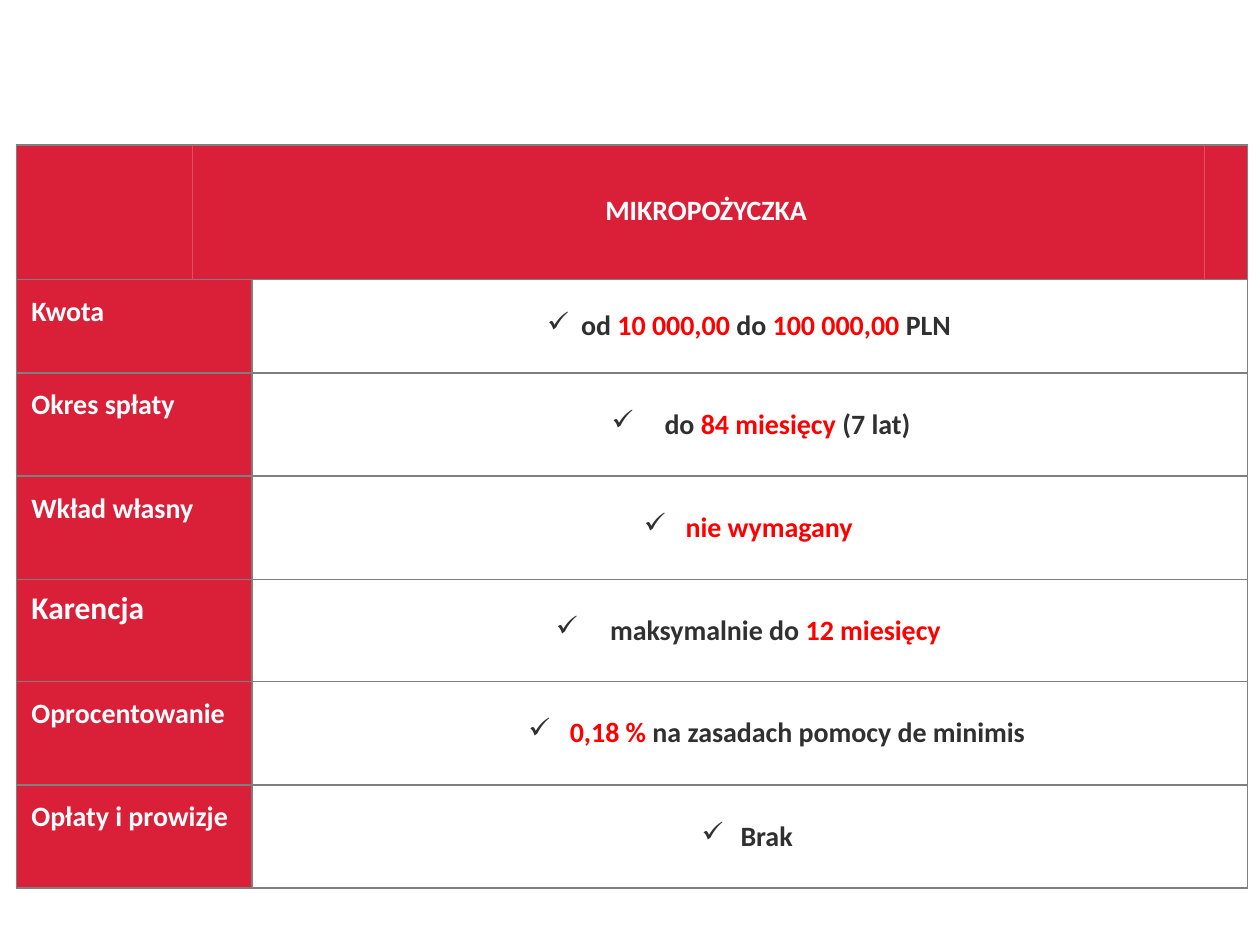
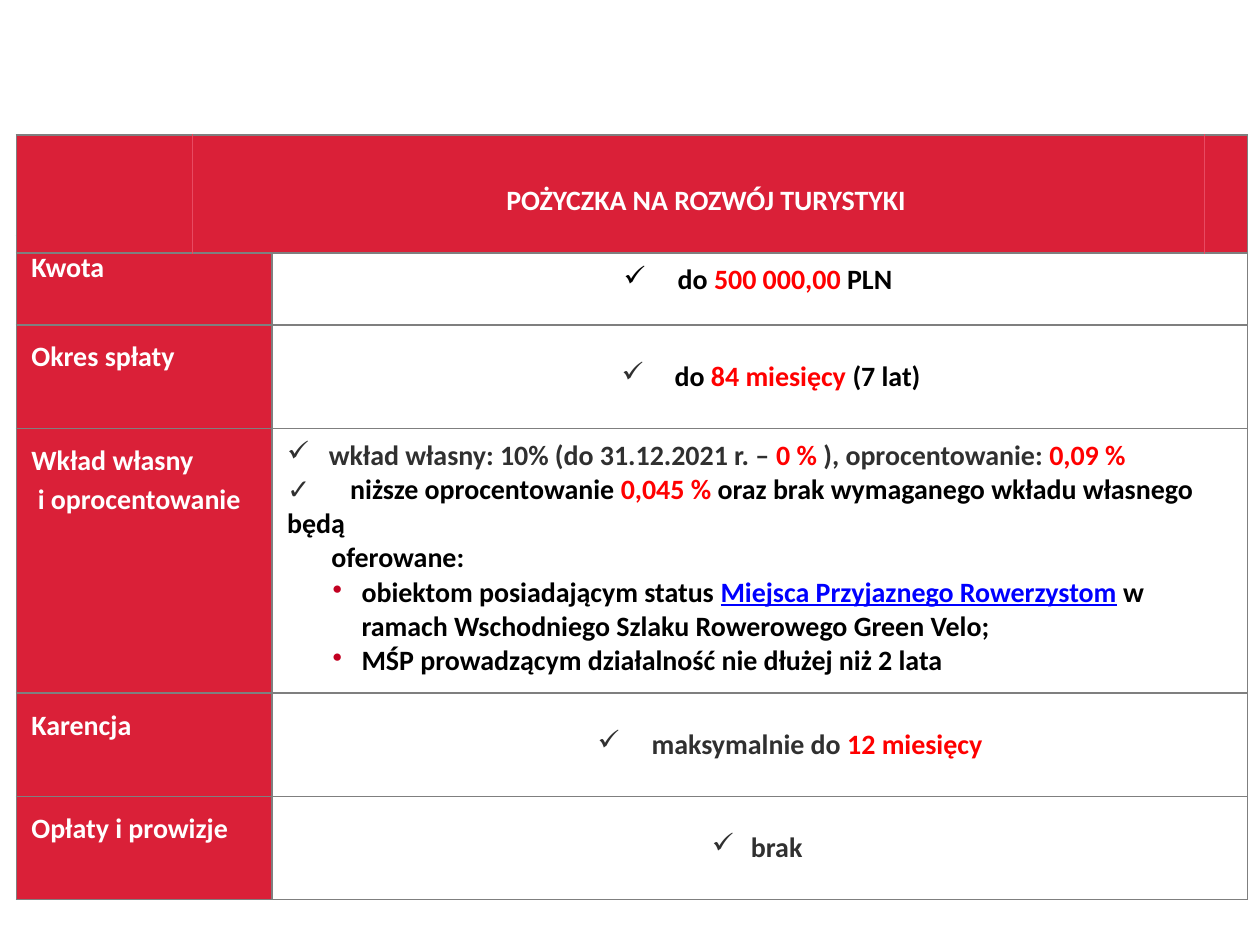
import pptx
import pptx.util
import pptx.dml.color
import pptx.enum.text
import pptx.oxml
import pptx.oxml.ns
import lxml.etree

Inches, Pt = pptx.util.Inches, pptx.util.Pt
RGBColor = pptx.dml.color.RGBColor
ALIGN, ANCHOR = pptx.enum.text.PP_ALIGN, pptx.enum.text.MSO_ANCHOR
qn = pptx.oxml.ns.qn

CRIMSON = RGBColor(0xDA, 0x20, 0x38)
WHITE = RGBColor(0xFF, 0xFF, 0xFF)
DARK = RGBColor(0x30, 0x30, 0x30)
BLACK = RGBColor(0, 0, 0)
RED = RGBColor(0xFF, 0, 0)
LINK = RGBColor(0, 0, 0xFF)
BULLET_RED = RGBColor(0xC2, 0x00, 0x21)
GRAY = RGBColor(0x7F, 0x7F, 0x7F)
SEAM = RGBColor(0xE8, 0x4A, 0x62)

FONT = "Calibri"
LEFT = 0.13
HEADER_COLS = [1.4, 8.03, 0.34]
CHECK, DOT = "✓", "•"


def item(runs, margin, gap, mark=CHECK, mark_color=DARK, tab=None):
    return dict(runs=runs, margin=margin, gap=gap, mark=mark, mark_color=mark_color, tab=tab)


SLIDES = [
    dict(
        title="MIKROPOŻYCZKA", header_top=1.15, header_height=1.07,
        top=2.22, cols=[1.87, 7.9],
        rows=[
            (0.74, ["Kwota"], [item([("od ", DARK), ("10 000,00 ", RED), ("do ", DARK),
                                     ("100 000,00 ", RED), ("PLN", DARK)], 0.3, 0.27)]),
            (0.82, ["Okres spłaty"], [item([("do ", DARK), ("84 miesięcy ", RED),
                                            ("(7 lat)", DARK)], 0.64, 0.42)]),
            (0.82, ["Wkład własny"], [item([("nie wymagany", RED)], 0.35, 0.33)]),
            (0.81, ["Karencja"], [item([("maksymalnie do ", DARK),
                                        ("12 miesięcy", RED)], 0.45, 0.43)]),
            (0.82, ["Oprocentowanie"], [item([("0,18 %", RED),
                                              (" na zasadach pomocy de minimis", DARK)], 0.8, 0.33)]),
            (0.82, ["Opłaty i prowizje"], [item([("Brak", DARK)], 0.31, 0.31)]),
        ],
        large_label="Karencja",
    ),
    dict(
        title="POŻYCZKA NA ROZWÓJ TURYSTYKI", header_top=1.07, header_height=0.94,
        top=1.87, cols=[2.03, 7.74],
        rows=[
            (0.71, ["Kwota"], [item([("do ", BLACK), ("500 000,00 ", RED), ("PLN", BLACK)],
                                    0.44, 0.43, mark_color=BLACK)]),
            (0.82, ["Okres spłaty"], [item([("do ", BLACK), ("84 miesięcy ", RED),
                                            ("(7 lat)", BLACK)], 0.64, 0.42)]),
            (2.1, ["Wkład własny", "i oprocentowanie"], [
                item([("wkład własny: 10% (do 31.12.2021 r. – ", DARK), ("0 %", RED),
                      (" ), oprocentowanie: ", DARK), ("0,09 %", RED)], 0.33, 0.33),
                item([("✓\t", DARK), ("niższe oprocentowanie ", BLACK), ("0,045 %", RED),
                      (" oraz brak wymaganego wkładu własnego będą", BLACK)],
                     0, 0, mark=None, tab=0.29),
                item([("oferowane:", BLACK)], 0.35, 0, mark=None),
                item([("obiektom posiadającym status ", BLACK),
                      ("Miejsca Przyjaznego Rowerzystom", LINK),
                      (" w ramach Wschodniego Szlaku Rowerowego Green Velo;", BLACK)],
                     0.59, 0.23, DOT, BULLET_RED),
                item([("MŚP prowadzącym działalność nie dłużej niż 2 lata", BLACK)],
                     0.59, 0.23, DOT, BULLET_RED),
            ]),
            (0.82, ["Karencja"], [item([("maksymalnie do ", DARK),
                                        ("12 miesięcy", RED)], 0.95, 0.43)]),
            (0.82, ["Opłaty i prowizje"], [item([("brak", DARK)], 0.31, 0.31)]),
        ],
        large_label=None,
    ),
]


def add_run(p, text, color, size=16):
    r = p.add_run()
    r.text = text
    r.font.name, r.font.size, r.font.bold = FONT, Pt(size), True
    r.font.color.rgb = color
    if color == LINK:
        r.font.underline = True


def indent(p, margin, gap=0, mark=None, mark_color=None, tab=None):
    pPr = p._p.get_or_add_pPr()
    pPr.set("marL", str(Inches(margin)))
    pPr.set("indent", str(-Inches(gap)))
    if mark:
        clr = lxml.etree.SubElement(pPr, qn("a:buClr"))
        lxml.etree.SubElement(clr, qn("a:srgbClr"), val=str(mark_color))
        lxml.etree.SubElement(pPr, qn("a:buChar"), char=mark)
    else:
        lxml.etree.SubElement(pPr, qn("a:buNone"))
    if tab:
        tabs = lxml.etree.SubElement(pPr, qn("a:tabLst"))
        lxml.etree.SubElement(tabs, qn("a:tab"), pos=str(Inches(tab)), algn="l")


def paragraphs(cell, items):
    tf = cell.text_frame
    for i, entry in enumerate(items):
        yield (tf.add_paragraph() if i else tf.paragraphs[0]), entry


def style_cell(cell, fill=None, seams=()):
    cell.margin_left, cell.margin_right = Inches(0.12), Inches(0.16)
    cell.margin_top, cell.margin_bottom = Inches(0.08), Inches(0.12)
    tcPr = cell._tc.get_or_add_tcPr()
    for side in ("L", "R", "T", "B"):
        color, width = (SEAM, 0.5) if side in seams else (GRAY, 1)
        ln = lxml.etree.SubElement(tcPr, qn("a:ln" + side), w=str(Pt(width)))
        solid = lxml.etree.SubElement(ln, qn("a:solidFill"))
        lxml.etree.SubElement(solid, qn("a:srgbClr"), val=str(color))
    if fill is None:
        cell.fill.background()
    else:
        cell.fill.solid()
        cell.fill.fore_color.rgb = fill


def add_table(s, top, cols, heights):
    frame = s.shapes.add_table(len(heights), len(cols), Inches(LEFT), Inches(top),
                               Inches(sum(cols)), Inches(sum(heights)))
    table = frame.table
    table.first_row = table.horz_banding = False
    for col, width in zip(table.columns, cols):
        col.width = Inches(width)
    for row, height in zip(table.rows, heights):
        row.height = Inches(height)
    return table


def add_terms(s, data):
    table = add_table(s, data["top"], data["cols"], [row[0] for row in data["rows"]])
    for n, (_, labels, items) in enumerate(data["rows"]):
        label, terms = table.cell(n, 0), table.cell(n, 1)
        style_cell(label, CRIMSON)
        style_cell(terms)
        terms.vertical_anchor = ANCHOR.MIDDLE
        for p, text in paragraphs(label, labels):
            large = text == data["large_label"]
            indent(p, 0 if text == labels[0] else 0.05)
            p.line_spacing = 1.0 if large else 1.15
            add_run(p, text, WHITE, 18 if large else 16)
        for p, entry in paragraphs(terms, items):
            indent(p, entry["margin"], entry["gap"], entry["mark"],
                   entry["mark_color"], entry["tab"])
            if len(items) == 1:
                p.alignment = ALIGN.CENTER
                p.line_spacing = 1.15
            for text, color in entry["runs"]:
                add_run(p, text, color)


def add_header(s, data):
    table = add_table(s, data["header_top"], HEADER_COLS, [data["header_height"]])
    for n, seams in enumerate(("R", "LR", "L")):
        style_cell(table.cell(0, n), CRIMSON, seams)
    cell = table.cell(0, 1)
    cell.margin_top = Inches(0.35)
    p = cell.text_frame.paragraphs[0]
    indent(p, 0.16)
    p.alignment = ALIGN.CENTER
    p.line_spacing = 1.15
    add_run(p, data["title"], WHITE)


def main():
    prs = pptx.Presentation()
    prs.slide_width, prs.slide_height = Inches(10), Inches(7.5)
    for data in SLIDES:
        s = prs.slides.add_slide(prs.slide_layouts[6])
        add_terms(s, data)
        add_header(s, data)
    prs.save("out.pptx")


if __name__ == "__main__":
    main()
